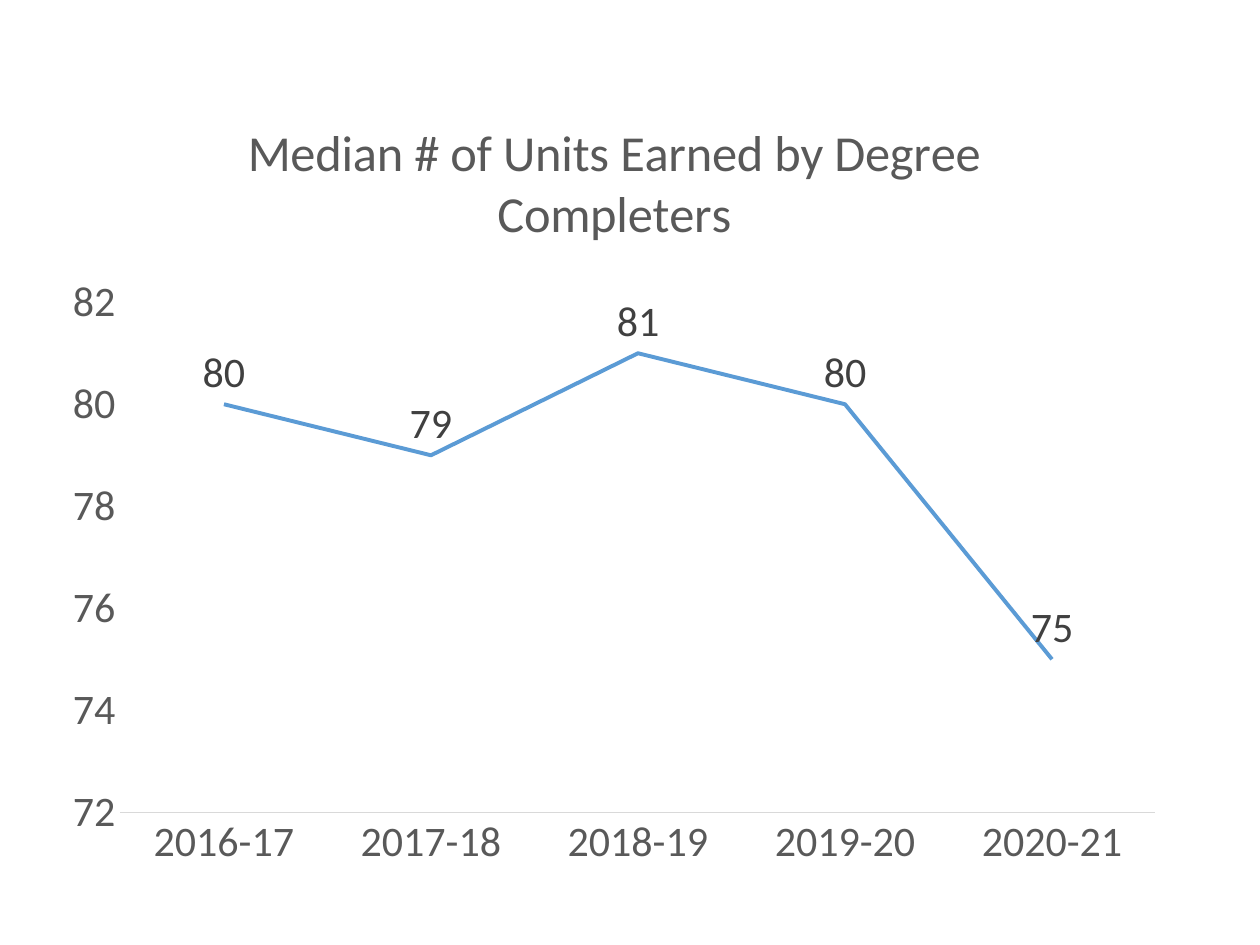
from pptx import Presentation
from pptx.chart.data import CategoryChartData
from pptx.dml.color import RGBColor
from pptx.enum.chart import XL_CHART_TYPE, XL_LABEL_POSITION, XL_TICK_MARK
from pptx.util import Inches, Pt

# Content
TITLE = "Median # of Units Earned by Degree Completers"
MEDIAN_UNITS = {"2016-17": 80, "2017-18": 79, "2018-19": 81, "2019-20": 80, "2020-21": 75}
GRAY, DARK_GRAY, LIGHT_GRAY, BLUE = "595959", "404040", "D9D9D9", "5B9BD5"


def color(hex_string):
    return RGBColor.from_string(hex_string)


def format_font(font, size=24, fill=GRAY):
    font.name = "Calibri"
    font.size = Pt(size)
    font.bold = False
    font.color.rgb = color(fill)


def add_text(text_frame, text, **font_format):
    run = text_frame.paragraphs[0].add_run()
    run.text = text
    format_font(run.font, **font_format)


def format_line(line, fill, width):
    line.color.rgb = color(fill)
    line.width = Pt(width)


presentation = Presentation()
presentation.slide_width, presentation.slide_height = Inches(10), Inches(7.5)
slide = presentation.slides.add_slide(presentation.slide_layouts[6])

# Line chart
chart_data = CategoryChartData(number_format="0")
chart_data.categories = list(MEDIAN_UNITS)
chart_data.add_series("Series 1", list(MEDIAN_UNITS.values()))
chart = slide.shapes.add_chart(
    XL_CHART_TYPE.LINE, Inches(0.4), Inches(0.69), Inches(8.95), Inches(6.33), chart_data
).chart
format_font(chart.font, fill="000000")
chart.has_legend = False
chart.has_title = True
add_text(chart.chart_title.text_frame, TITLE, size=28.8)
chart.chart_title.include_in_layout = False

# Axes
for axis in (chart.category_axis, chart.value_axis):
    axis.has_major_gridlines = False
    axis.major_tick_mark = axis.minor_tick_mark = XL_TICK_MARK.NONE
    format_font(axis.tick_labels.font)
format_line(chart.category_axis.format.line, LIGHT_GRAY, 0.75)
value_axis = chart.value_axis
value_axis.format.line.fill.background()
value_axis.minimum_scale, value_axis.maximum_scale, value_axis.major_unit = 72, 82, 2
value_axis.tick_labels.number_format = "0"
value_axis.tick_labels.number_format_is_linked = False

# Series and value labels
plot = chart.plots[0]
plot.vary_by_categories = False
series = plot.series[0]
series.smooth = False
format_line(series.format.line, BLUE, 2.25)
labels = series.data_labels
labels.show_value = True
labels.position = XL_LABEL_POSITION.ABOVE
labels.number_format = "0"
labels.number_format_is_linked = False
format_font(labels.font, fill=DARK_GRAY)

presentation.save("out.pptx")
